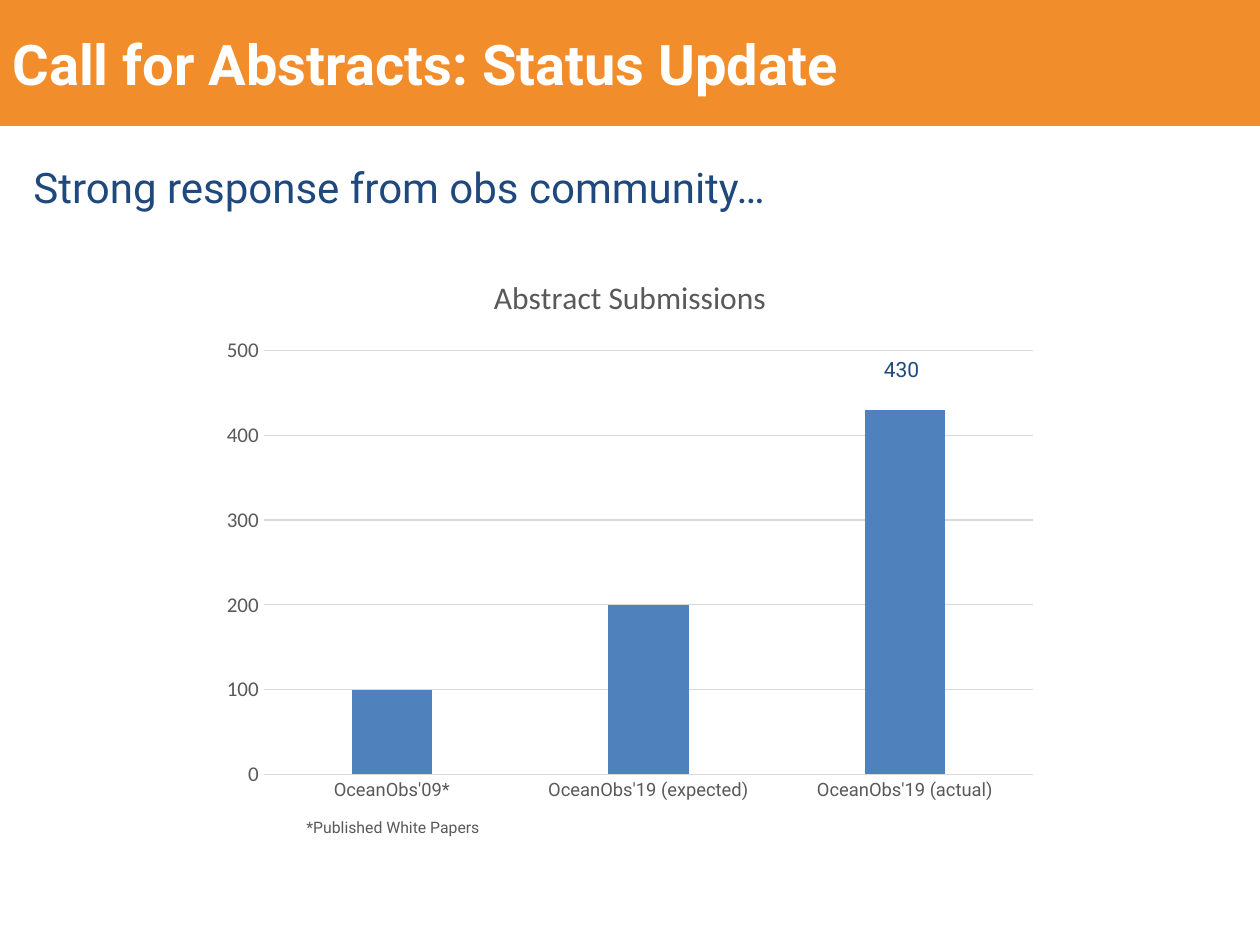
from dataclasses import dataclass

from pptx import Presentation
from pptx.chart.data import CategoryChartData
from pptx.dml.color import RGBColor
from pptx.enum.chart import XL_CHART_TYPE, XL_TICK_MARK
from pptx.enum.shapes import MSO_SHAPE
from pptx.enum.text import MSO_ANCHOR, MSO_AUTO_SIZE, PP_ALIGN
from pptx.util import Inches, Pt

WIDE, HIGH = Inches(10), Inches(7.5)
COLS, ROWS = 60, 45  # grid units across and down the slide


@dataclass(frozen=True)
class Theme:
    orange: str = "F28D2C"
    white: str = "FFFFFF"
    navy: str = "1F497D"
    blue: str = "4F81BD"
    gray: str = "595959"
    rule: str = "D9D9D9"
    sans: str = "Roboto"
    plot: str = "Calibri"
    head: float = 32
    lead: float = 24
    title: float = 18
    label: float = 12
    tick: float = 10.5
    note: float = 9


THEME = Theme()


@dataclass(frozen=True)
class Area:
    col: float
    row: float
    cols: float
    rows: float

    def box(self) -> tuple[int, int, int, int]:
        return (int(WIDE * self.col / COLS), int(HIGH * self.row / ROWS),
                int(WIDE * self.cols / COLS), int(HIGH * self.rows / ROWS))


@dataclass(frozen=True)
class Label:
    text: str
    area: Area
    size: float
    color: str


LABELS = (
    Label("Strong response from obs community…", Area(1, 7.4, 41.2, 3), THEME.lead, THEME.navy),
    Label("430", Area(41.5, 16.7, 5, 1.8), THEME.label, THEME.navy),
    Label("*Published White Papers", Area(14, 38.65, 10.5, 1.5), THEME.note, THEME.gray),
)
COUNTS = {"OceanObs'09*": 100, "OceanObs'19 (expected)": 200, "OceanObs'19 (actual)": 430}


def assign(item, values: dict) -> None:
    for name, value in values.items():
        setattr(item, name, value)


def style(font, size: float, color: str, face: str = THEME.sans, bold: bool = False) -> None:
    assign(font, {"size": Pt(size), "name": face, "bold": bold})
    font.color.rgb = RGBColor.from_string(color)


def paint(fill, color: str) -> None:
    fill.solid()
    fill.fore_color.rgb = RGBColor.from_string(color)


def rule(line) -> None:
    line.width = Pt(0.75)
    line.color.rgb = RGBColor.from_string(THEME.rule)


def write(frame, text: str, size: float, color: str, bold: bool = False) -> None:
    para = frame.paragraphs[0]
    para.alignment = PP_ALIGN.LEFT
    run = para.add_run()
    run.text = text
    style(run.font, size, color, bold=bold)


def add_head(slide, text: str) -> None:
    band = slide.shapes.add_shape(MSO_SHAPE.RECTANGLE, *Area(0, 0, COLS, 6).box())
    band.shadow.inherit = False
    paint(band.fill, THEME.orange)
    band.line.fill.background()
    assign(band.text_frame, {"vertical_anchor": MSO_ANCHOR.MIDDLE, "word_wrap": True})
    write(band.text_frame, text, THEME.head, THEME.white, bold=True)


def add_label(slide, label: Label) -> None:
    frame = slide.shapes.add_textbox(*label.area.box()).text_frame
    assign(frame, {"word_wrap": True, "auto_size": MSO_AUTO_SIZE.SHAPE_TO_FIT_TEXT})
    write(frame, label.text, label.size, label.color)


def add_bars(slide, title: str, counts: dict[str, int]) -> None:
    data = CategoryChartData()
    data.categories = list(counts)
    data.add_series("Series 1", list(counts.values()))
    chart = slide.shapes.add_chart(
        XL_CHART_TYPE.COLUMN_CLUSTERED, *Area(10, 12, 40, 26.65).box(), data).chart
    assign(chart, {"has_legend": False, "has_title": True})
    style(chart.font, 10, "000000", THEME.plot)

    frame = chart.chart_title.text_frame
    frame.text = title
    style(frame.paragraphs[0].runs[0].font, THEME.title, THEME.gray, THEME.plot)

    plot = chart.plots[0]
    assign(plot, {"gap_width": 219, "overlap": -27, "vary_by_categories": False})
    paint(plot.series[0].format.fill, THEME.blue)

    cat, val = chart.category_axis, chart.value_axis
    ticks = {"major_tick_mark": XL_TICK_MARK.NONE, "minor_tick_mark": XL_TICK_MARK.NONE}
    assign(cat, ticks)
    assign(val, ticks | {"minimum_scale": 0, "maximum_scale": 500, "major_unit": 100,
                         "has_major_gridlines": True})
    style(cat.tick_labels.font, THEME.tick, THEME.gray)
    style(val.tick_labels.font, THEME.label, THEME.gray, THEME.plot)
    rule(cat.format.line)
    rule(val.major_gridlines.format.line)
    val.format.line.fill.background()


def main() -> None:
    deck = Presentation()
    assign(deck, {"slide_width": WIDE, "slide_height": HIGH})
    slide = deck.slides.add_slide(deck.slide_layouts[6])
    add_head(slide, "Call for Abstracts: Status Update")
    add_bars(slide, "Abstract Submissions", COUNTS)
    for label in LABELS:
        add_label(slide, label)
    deck.save("out.pptx")


if __name__ == "__main__":
    main()
